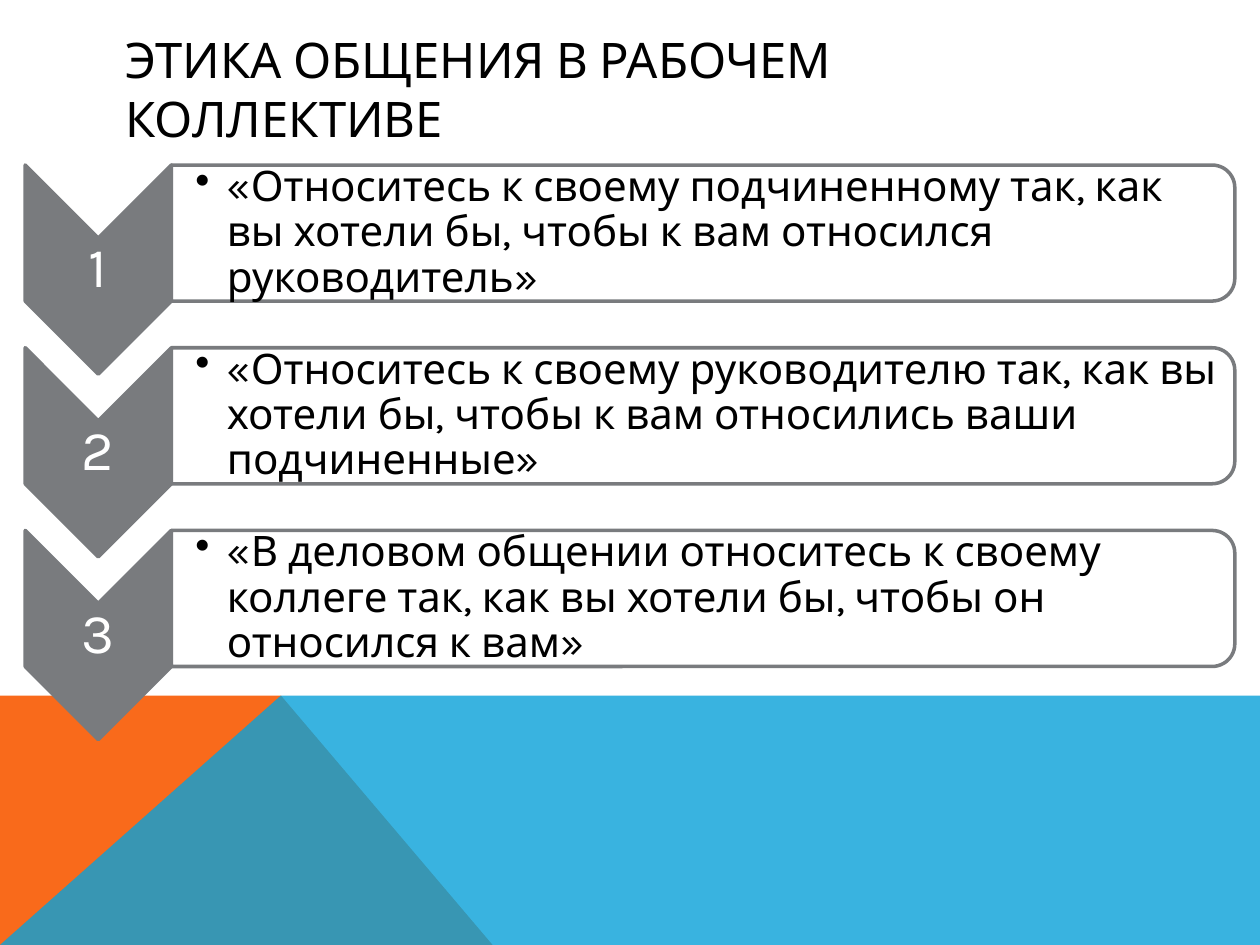
from lxml import etree
from pptx import Presentation
from pptx.dml.color import RGBColor
from pptx.enum import shapes, text
from pptx.oxml.ns import qn
from pptx.util import Inches, Pt

FONT = "Karla"
GRAY = "797B7E"
RULES = [
    "«Относитесь к своему подчиненному так, как вы хотели бы, чтобы к вам относился руководитель»",
    "«Относитесь к своему руководителю так, как вы хотели бы, чтобы к вам относились ваши подчиненные»",
    "«В деловом общении относитесь к своему коллеге так, как вы хотели бы, чтобы он относился к вам»",
]
FIRST_TOP = 1.31
ROW_STEP = 1.45


def color(value):
    """Turn a hex string into a colour."""
    return RGBColor.from_string(value)


def paint(shape, fill, line=None, opacity=100):
    """Set the fill, its opacity and the outline, without a shadow."""
    shape.shadow.inherit = False
    shape.fill.solid()
    shape.fill.fore_color.rgb = color(fill)
    if opacity < 100:
        tint = shape.fill._xPr.find(qn("a:solidFill"))[0]
        etree.SubElement(tint, qn("a:alpha"), val=str(opacity * 1000))
    if line:
        shape.line.color.rgb = color(line)
        shape.line.width = Pt(2)
    else:
        shape.line.fill.background()


def add_polygon(page, points, fill, opacity=100):
    """Draw a closed filled outline through points in inches."""
    corners = [(Inches(x), Inches(y)) for x, y in points]
    builder = page.shapes.build_freeform(*corners[0], scale=1.0)
    builder.add_line_segments(corners[1:], close=True)
    paint(builder.convert_to_shape(), fill, opacity=opacity)


def add_turned(page, kind, left, top, width, height, fill, opacity=100):
    """Add a shape turned by 90 degrees that covers the given area."""
    shift = (width - height) / 2
    shape = page.shapes.add_shape(
        kind, Inches(left + shift), Inches(top - shift), Inches(height), Inches(width))
    shape.rotation = 90
    paint(shape, fill, GRAY, opacity)


def add_text(page, wording, area, size, ink, insets=(0.1, 0.05, 0.1, 0.05)):
    """Add a vertically centred text box and return its paragraph."""
    box = page.shapes.add_textbox(*map(Inches, area))
    frame = box.text_frame
    frame.word_wrap = True
    frame.vertical_anchor = text.MSO_ANCHOR.MIDDLE
    (frame.margin_left, frame.margin_top,
     frame.margin_right, frame.margin_bottom) = map(Inches, insets)
    frame.text = wording
    para = frame.paragraphs[0]
    font = para.runs[0].font
    font.name, font.size = FONT, Pt(size)
    font.color.rgb = color(ink)
    return para


def add_bullet(para, indent):
    """Give a paragraph a round bullet with a hanging indent."""
    props = para._p.get_or_add_pPr()
    props.set("marL", str(Inches(indent)))
    props.set("indent", str(-Inches(indent)))
    etree.SubElement(props, qn("a:buChar"), char="•")


def add_rule(page, number, wording, top):
    """Add a numbered chevron and the framed rule beside it."""
    add_turned(page, shapes.MSO_SHAPE.CHEVRON, 0.2, top, 1.16, 1.66, GRAY)
    label = add_text(page, str(number), (0.2, top + 0.58, 1.16, 0.5), 32, "FFFFFF", (0.02,) * 4)
    label.alignment = text.PP_ALIGN.CENTER
    label.line_spacing = 0.9
    add_turned(page, shapes.MSO_SHAPE.ROUND_2_SAME_RECTANGLE,
               1.36, top, 8.44, 1.08, "FFFFFF", 90)
    para = add_text(page, wording, (1.36, top + 0.05, 8.39, 0.98), 24, "000000",
                    (0.19, 0.02, 0.02, 0.02))
    para.line_spacing = 0.9
    add_bullet(para, 0.25)


def main():
    """Build the slide and save it."""
    deck = Presentation()
    deck.slide_width, deck.slide_height = Inches(10), Inches(7.5)
    page = deck.slides.add_slide(deck.slide_layouts[6])
    add_polygon(page, [(0, 7.5), (0, 5.52), (2.23, 5.52), (3.91, 7.5)], "F96A1B")
    add_polygon(page, [(0, 7.5), (2.23, 5.52), (10, 5.52), (10, 7.5)], "08A1D9", 80)
    add_text(page, "ЭТИКА ОБЩЕНИЯ В РАБОЧЕМ КОЛЛЕКТИВЕ", (0.9, 0.4, 8.22, 0.6), 28, "000000")
    for index, wording in enumerate(RULES):
        add_rule(page, index + 1, wording, FIRST_TOP + index * ROW_STEP)
    deck.save("out.pptx")


if __name__ == "__main__":
    main()
